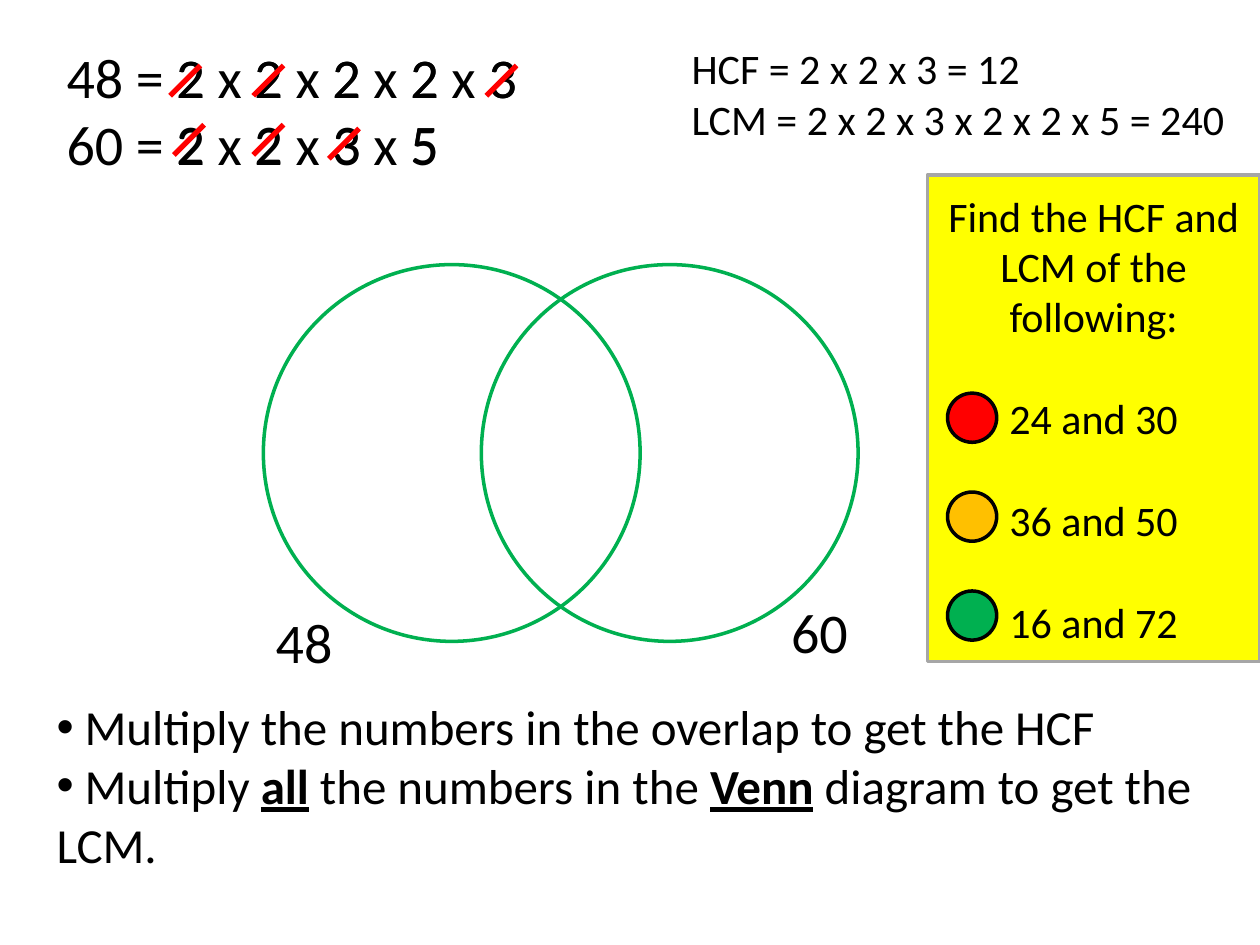
import dataclasses
import typing

import lxml.etree
import pptx
import pptx.dml.color
import pptx.enum.shapes
import pptx.enum.text
import pptx.oxml.ns
import pptx.util

Inches = pptx.util.Inches
Pt = pptx.util.Pt
Kind = pptx.enum.shapes.MSO_SHAPE
Align = pptx.enum.text.PP_ALIGN


@dataclasses.dataclass
class Label:
    left: float
    top: float
    width: float
    height: float
    lines: list[str]
    size: int = 32
    bullet: str = ""


@dataclasses.dataclass
class Disc:
    left: float
    top: float
    size: float
    line: str
    fill: str = ""


@dataclasses.dataclass
class Strike:
    left: float
    base: float


def color(code: str) -> pptx.dml.color.RGBColor:
    return pptx.dml.color.RGBColor.from_string(code)


def add_bullet(para: typing.Any, mark: str) -> None:
    props = para._p.get_or_add_pPr()
    props.set("marL", "0")
    props.set("indent", "0")
    font = lxml.etree.SubElement(props, pptx.oxml.ns.qn("a:buFont"))
    font.set("typeface", "Arial")
    char = lxml.etree.SubElement(props, pptx.oxml.ns.qn("a:buChar"))
    char.set("char", mark)


def write(frame: typing.Any, lines: list[str], *, size: int = 32,
          align: typing.Any = Align.LEFT, gap: float = 0,
          bullet: str = "") -> None:
    frame.word_wrap = True
    for row, line in enumerate(lines):
        para = frame.add_paragraph() if row else frame.paragraphs[0]
        para.alignment = align
        if row and gap:
            para.space_before = Pt(gap)
        if bullet:
            add_bullet(para, bullet)
        for part, text in enumerate(line.split("*")):
            run = para.add_run()
            run.text = text
            run.font.name = "Calibri"
            run.font.size = Pt(size)
            run.font.color.rgb = color("000000")
            if part % 2:
                run.font.bold = True
                run.font.underline = True


def add_label(slide: typing.Any, label: Label) -> None:
    box = slide.shapes.add_textbox(Inches(label.left), Inches(label.top),
                                   Inches(label.width), Inches(label.height))
    box.text_frame.auto_size = pptx.enum.text.MSO_AUTO_SIZE.SHAPE_TO_FIT_TEXT
    write(box.text_frame, label.lines, size=label.size, bullet=label.bullet)


def add_shape(slide: typing.Any, kind: typing.Any, left: float, top: float,
              width: float, height: float, line: str, fill: str) -> typing.Any:
    shape = slide.shapes.add_shape(kind, Inches(left), Inches(top),
                                   Inches(width), Inches(height))
    shape.shadow.inherit = False
    shape.line.color.rgb = color(line)
    shape.line.width = Pt(2)
    if fill:
        shape.fill.solid()
        shape.fill.fore_color.rgb = color(fill)
    else:
        shape.fill.background()
    return shape


def add_disc(slide: typing.Any, disc: Disc) -> None:
    add_shape(slide, Kind.OVAL, disc.left, disc.top, disc.size, disc.size,
              disc.line, disc.fill)


def add_strike(slide: typing.Any, strike: Strike) -> None:
    line = slide.shapes.add_connector(
        pptx.enum.shapes.MSO_CONNECTOR.STRAIGHT,
        Inches(strike.left), Inches(strike.base),
        Inches(strike.left + 0.24), Inches(strike.base - 0.24))
    line.line.color.rgb = color("FF0000")
    line.line.width = Pt(3)
    lxml.etree.SubElement(line._element.spPr, pptx.oxml.ns.qn("a:effectLst"))


def add_task(slide: typing.Any) -> None:
    panel = add_shape(slide, Kind.RECTANGLE, 7.36, 1.39, 2.64, 3.86,
                      "A6A6A6", "FFFF00")
    panel.text_frame.vertical_anchor = pptx.enum.text.MSO_ANCHOR.MIDDLE
    write(panel.text_frame,
          ["Find the HCF and LCM of the following:",
           "24 and 30", "36 and 50", "16 and 72"],
          size=24, align=Align.CENTER, gap=29.3)
    for row, fill in enumerate(["FF0000", "FFC000", "00B050"]):
        add_disc(slide, Disc(7.52, 3.12 + row * 0.785, 0.39, "000000", fill))


def main() -> None:
    deck = pptx.Presentation()
    deck.slide_width = Inches(10)
    deck.slide_height = Inches(7.5)
    slide = deck.slides.add_slide(deck.slide_layouts[6])

    add_label(slide, Label(0.43, 0.29, 4.88, 1.18,
                           ["48 = 2 x 2 x 2 x 2 x 3", "60 = 2 x 2 x 3 x 5"]))
    for left in (2.09, 3.82):
        add_disc(slide, Disc(left, 2.1, 2.99, "00B050"))
    add_label(slide, Label(2.09, 4.77, 1.1, 0.64, ["48"]))
    add_label(slide, Label(6.18, 4.69, 1.1, 0.64, ["60"]))

    for top, digits in ((0.29, "22223"), (0.81, "2235")):
        for col, digit in enumerate(digits):
            add_label(slide, Label(1.3 + col * 0.62, top, 0.63, 0.64, [digit]))
    for strike in (Strike(1.38, 1.23), Strike(1.35, 0.76), Strike(2.01, 0.76),
                   Strike(2.01, 1.23), Strike(3.86, 0.76), Strike(2.61, 1.26)):
        add_strike(slide, strike)

    add_label(slide, Label(
        0.35, 5.48, 9.29, 1.51,
        [" Multiply the numbers in the overlap to get the HCF",
         " Multiply *all* the numbers in the *Venn* diagram to get the LCM."],
        28, "•"))
    add_label(slide, Label(5.39, 0.29, 4.57, 0.91,
                           ["HCF = 2 x 2 x 3 = 12",
                            "LCM = 2 x 2 x 3 x 2 x 2 x 5 = 240"], 24))
    add_task(slide)
    deck.save("out.pptx")


if __name__ == "__main__":
    main()
